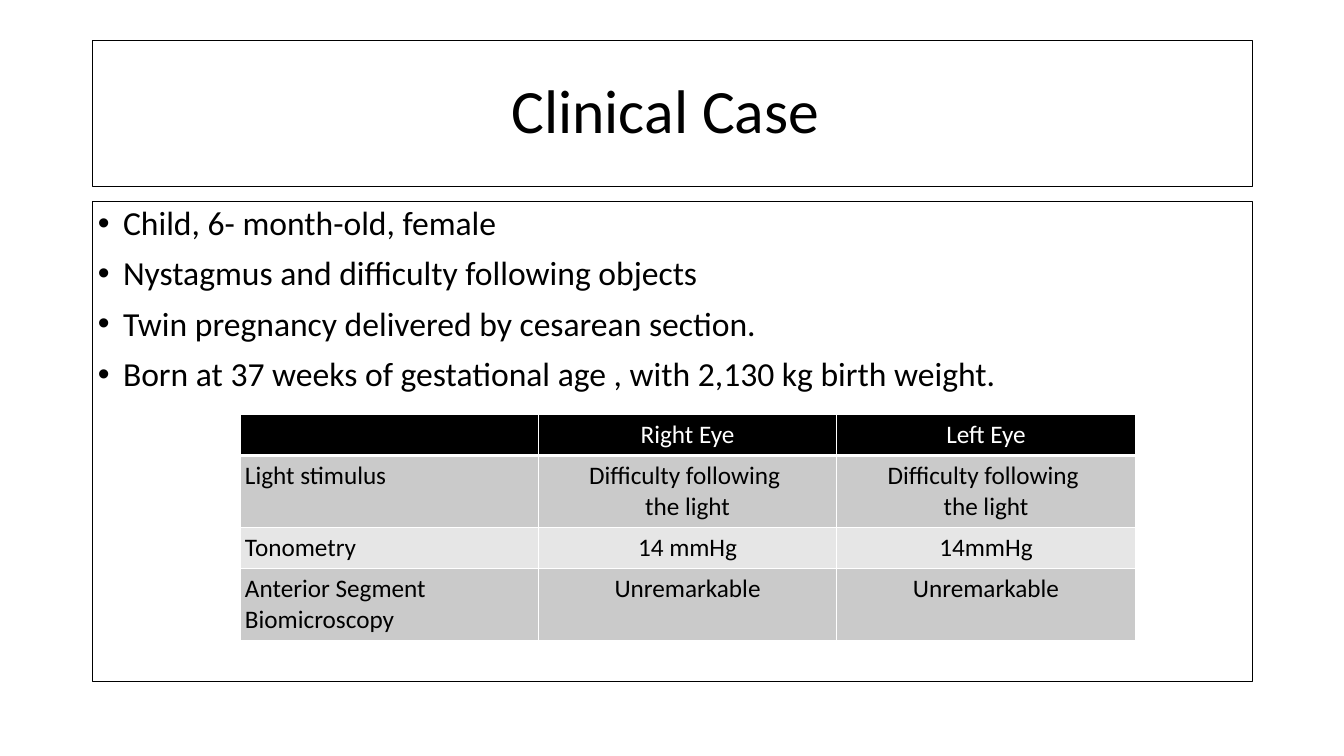
from lxml.etree import SubElement
from pptx import Presentation
from pptx.dml.color import RGBColor
from pptx.enum.text import MSO_ANCHOR, MSO_AUTO_SIZE, PP_ALIGN
from pptx.oxml.ns import qn
from pptx.util import Inches, Pt

COLORS = {"ink": "000000", "paper": "FFFFFF", "dark_band": "CACACA", "light_band": "E6E6E6"}
FONT = "Calibri"
INSET = Inches(0.05)


def color(name):
    return RGBColor.from_string(COLORS[name])


class CasePage:
    """Holds the style and the current slide."""

    def __init__(self, deck):
        self.page = deck.slides.add_slide(deck.slide_layouts[1])

    def add_span(self, paragraph, text, size, ink="ink"):
        span = paragraph.add_run()
        span.text = text
        span.font.name = FONT
        span.font.size = Pt(size)
        span.font.color.rgb = color(ink)

    def set_insets(self, holder):
        holder.margin_left = holder.margin_right = INSET
        holder.margin_top = holder.margin_bottom = INSET

    def frame(self, box, left, top, width, height, anchor):
        """Place a placeholder, outline it and return its text frame."""
        box.left, box.top = Inches(left), Inches(top)
        box.width, box.height = Inches(width), Inches(height)
        box.line.color.rgb = color("ink")
        box.line.width = Pt(0.75)
        text_frame = box.text_frame
        text_frame.word_wrap = True
        text_frame.auto_size = MSO_AUTO_SIZE.NONE
        text_frame.vertical_anchor = anchor
        self.set_insets(text_frame)
        return text_frame

    def title(self, text, *place):
        text_frame = self.frame(self.page.shapes.title, *place, MSO_ANCHOR.MIDDLE)
        paragraph = text_frame.paragraphs[0]
        paragraph.alignment = PP_ALIGN.CENTER
        paragraph.line_spacing = 0.9
        self.add_span(paragraph, text, 44)

    def bullets(self, items, *place):
        text_frame = self.frame(self.page.placeholders[1], *place, MSO_ANCHOR.TOP)
        for index, item in enumerate(items):
            paragraph = text_frame.add_paragraph() if index else text_frame.paragraphs[0]
            properties = paragraph._p.get_or_add_pPr()
            properties.set("marL", str(Inches(0.25)))
            properties.set("indent", str(-Inches(0.25)))
            SubElement(properties, qn("a:buChar")).set("char", "•")
            paragraph.line_spacing = 0.9
            paragraph.space_before = Pt(10 if index else 0)
            self.add_span(paragraph, item, 24)

    def borders(self, cell, header):
        properties = cell._tc.get_or_add_tcPr()
        for side in "LRTB":
            width = 3 if header and side == "B" else 1
            line = SubElement(properties, qn(f"a:ln{side}"), w=str(Pt(width)))
            fill = SubElement(line, qn("a:solidFill"))
            SubElement(fill, qn("a:srgbClr")).set("val", COLORS["paper"])

    def cell(self, cell, text, fill, alignment, header):
        self.borders(cell, header)
        cell.fill.solid()
        cell.fill.fore_color.rgb = color(fill)
        self.set_insets(cell)
        for index, line in enumerate(text.split("\n")):
            paragraph = cell.text_frame.add_paragraph() if index else cell.text_frame.paragraphs[0]
            paragraph.alignment = alignment
            if line:
                self.add_span(paragraph, line, 18, "paper" if header else "ink")

    def table(self, rows, heights, left, top, column_width):
        columns = len(rows[0])
        table = self.page.shapes.add_table(
            len(rows), columns, Inches(left), Inches(top),
            Inches(column_width * columns), Inches(sum(heights))).table
        for column in table.columns:
            column.width = Inches(column_width)
        for r, (texts, height) in enumerate(zip(rows, heights)):
            table.rows[r].height = Inches(height)
            fill = "ink" if r == 0 else ("dark_band" if r % 2 else "light_band")
            for c, text in enumerate(texts):
                # Short row labels are justified, the wrapping one is left-aligned
                label = PP_ALIGN.LEFT if r == len(rows) - 1 else PP_ALIGN.JUSTIFY
                alignment = PP_ALIGN.CENTER if c else label
                self.cell(table.cell(r, c), text, fill, alignment, r == 0)


def main():
    deck = Presentation()
    deck.slide_width, deck.slide_height = Inches(13.33), Inches(7.5)
    case = CasePage(deck)

    # Title and history
    case.title("Clinical Case ", 0.92, 0.4, 11.5, 1.45)
    case.bullets([
        "Child, 6- month-old, female",
        "Nystagmus and difficulty following objects",
        "Twin pregnancy delivered by cesarean section.",
        "Born at 37 weeks of gestational age , with 2,130 kg birth weight.",
    ], 0.92, 2, 11.5, 4.76)

    # Eye examination
    light_response = "Difficulty following \nthe light"
    case.table([
        ["", "Right Eye", "Left Eye"],
        ["Light stimulus", light_response, light_response],
        ["Tonometry", "14 mmHg", "14mmHg"],
        ["Anterior Segment Biomicroscopy", "Unremarkable", "Unremarkable"],
    ], [0.41, 0.71, 0.41, 0.71], 2.38, 4.11, 2.96)

    deck.save("out.pptx")


if __name__ == "__main__":
    main()
